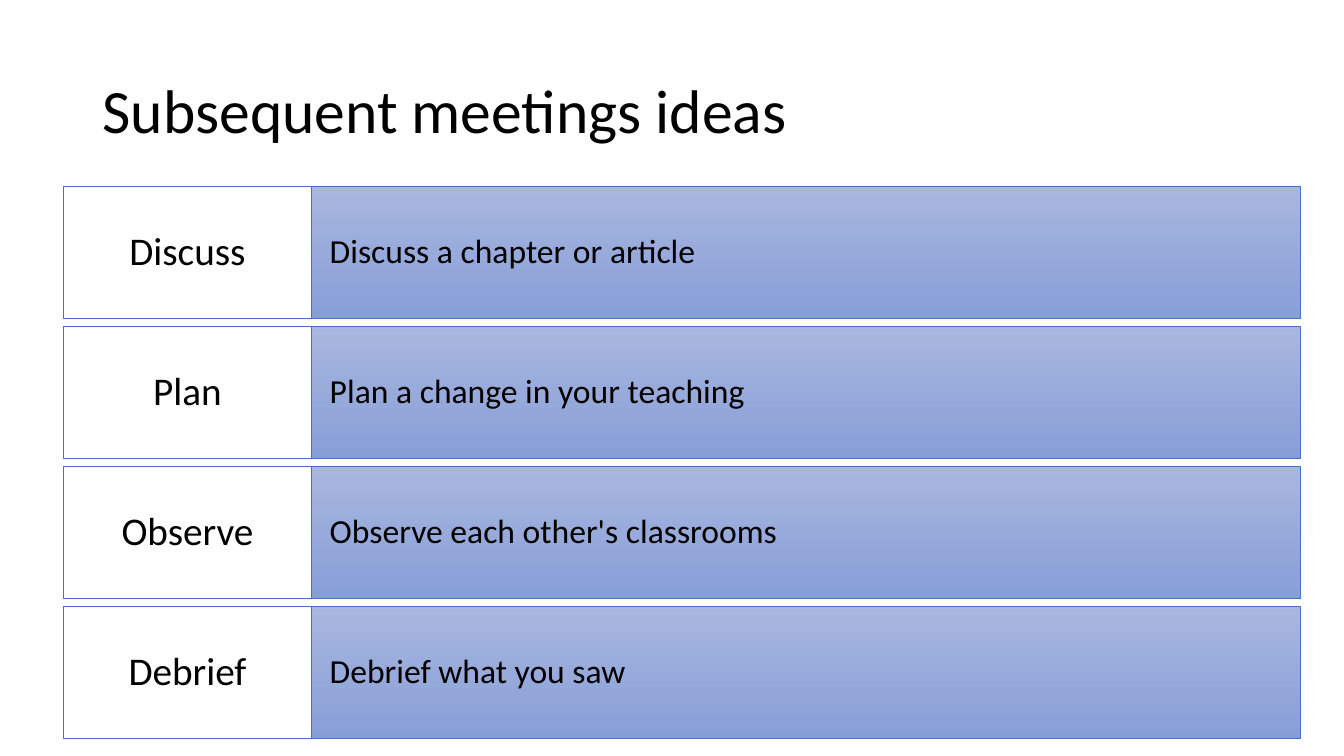
from pptx import Presentation
from pptx.dml.color import RGBColor
from pptx.enum.shapes import MSO_SHAPE
from pptx.enum.text import MSO_ANCHOR, PP_ALIGN
from pptx.util import Inches, Pt

BLACK = RGBColor(0x00, 0x00, 0x00)
WHITE = RGBColor(0xFF, 0xFF, 0xFF)
BORDER = RGBColor(0x44, 0x72, 0xC4)
BAND_TOP = RGBColor(0xA8, 0xB7, 0xDF)
BAND_BOTTOM = RGBColor(0x88, 0x9E, 0xD7)

IDEAS = [
    ("Discuss", "Discuss a chapter or article"),
    ("Plan", "Plan a change in your teaching"),
    ("Observe", "Observe each other's classrooms"),
    ("Debrief", "Debrief what you saw"),
]
FIRST_TOP, ROW_HEIGHT, ROW_PITCH = 1.85, 1.31, 1.39


def write(shape, text, size, align, inset_x, inset_y):
    frame = shape.text_frame
    frame.word_wrap = True
    frame.vertical_anchor = MSO_ANCHOR.MIDDLE
    frame.margin_left = frame.margin_right = Inches(inset_x)
    frame.margin_top = frame.margin_bottom = Inches(inset_y)
    paragraph = frame.paragraphs[0]
    paragraph.alignment = align
    paragraph.line_spacing = 0.9
    run = paragraph.add_run()
    run.text = text
    run.font.name = "Calibri"
    run.font.size = Pt(size)
    run.font.color.rgb = BLACK


def add_box(left, top, width):
    box = slide.shapes.add_shape(MSO_SHAPE.RECTANGLE, Inches(left), Inches(top),
                                 Inches(width), Inches(ROW_HEIGHT))
    box.shadow.inherit = False
    box.line.color.rgb = BORDER
    box.line.width = Pt(0.5)
    return box


prs = Presentation()
prs.slide_width = Inches(13.33)
prs.slide_height = Inches(7.5)
slide = prs.slides.add_slide(prs.slide_layouts[6])

# Title
title = slide.shapes.add_textbox(Inches(0.92), Inches(0.4), Inches(11.5), Inches(1.45))
write(title, "Subsequent meetings ideas", 44, PP_ALIGN.LEFT, 0.1, 0.05)

# One row per idea: gradient description band, then white keyword box
for row, (keyword, description) in enumerate(IDEAS):
    top = FIRST_TOP + row * ROW_PITCH

    band = add_box(3.08, top, 9.82)
    band.fill.gradient()
    band.fill.gradient_angle = 270
    for stop, color in zip(band.fill.gradient_stops, (BAND_TOP, BAND_BOTTOM)):
        stop.color.rgb = color
    write(band, description, 24, PP_ALIGN.LEFT, 0.19, 0.33)

    label = add_box(0.63, top, 2.46)
    label.fill.solid()
    label.fill.fore_color.rgb = WHITE
    write(label, keyword, 28, PP_ALIGN.CENTER, 0.13, 0.13)

prs.save("out.pptx")
